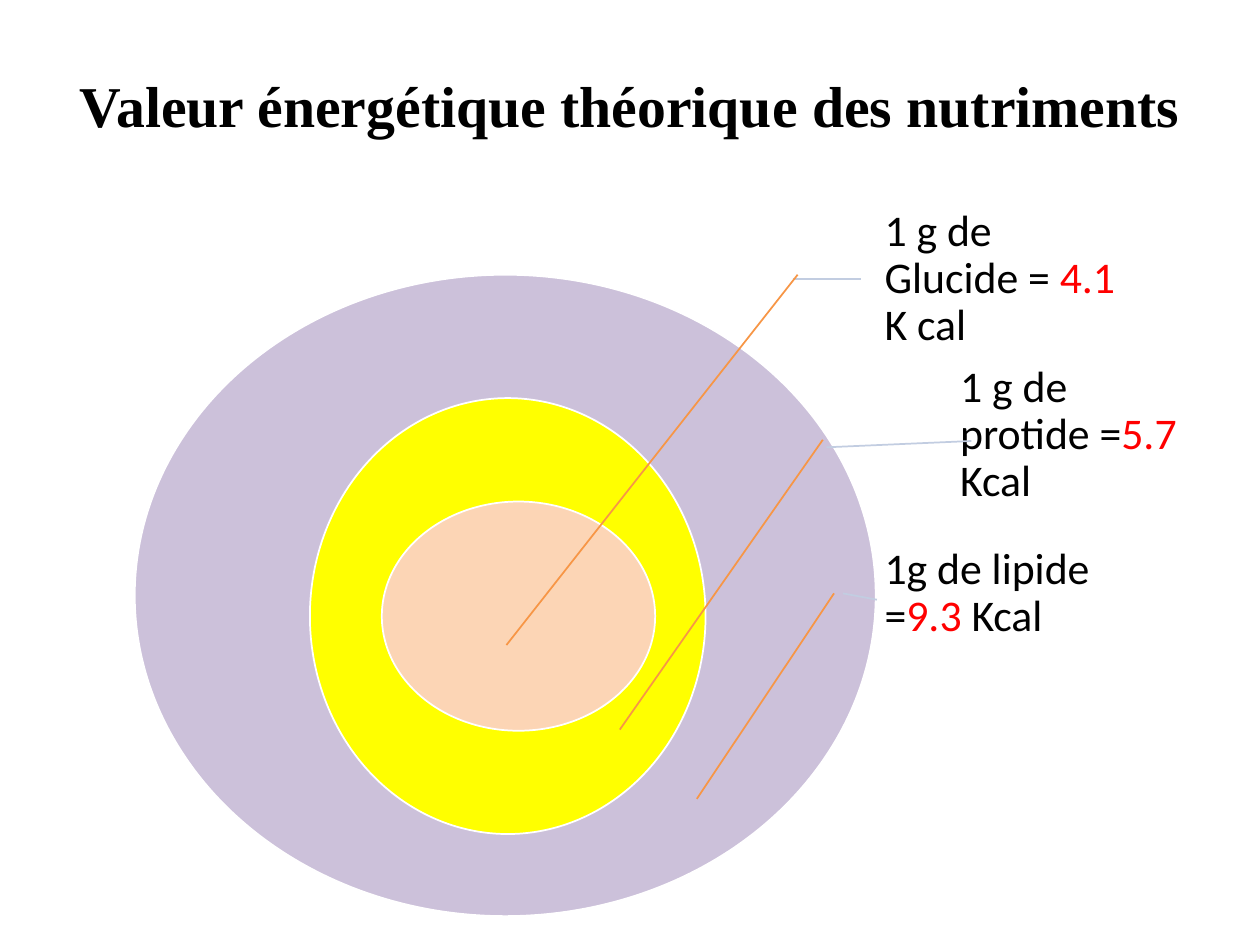
from dataclasses import dataclass

from pptx import Presentation
from pptx.dml.color import RGBColor as Rgb
from pptx.enum import shapes as sh, text as tx
from pptx.oxml import ns, xmlchemy as xc
from pptx.util import Pt


@dataclass(frozen=True)
class Theme:
    head: str = "Times New Roman"
    body: str = "Calibri"
    big: int = 33
    size: int = 25
    ink: Rgb = Rgb(0, 0, 0)
    mark: Rgb = Rgb(255, 0, 0)
    edge: Rgb = Rgb(255, 255, 255)
    fat: Rgb = Rgb(0xCC, 0xC1, 0xDA)
    protein: Rgb = Rgb(255, 255, 0)
    sugar: Rgb = Rgb(0xFC, 0xD5, 0xB5)
    link: Rgb = Rgb(0xC2, 0xCD, 0xE1)
    beam: Rgb = Rgb(0xF7, 0x96, 0x46)


T = Theme()

# Rings from the outside in: box and fill
RINGS = [
    ((77, 157, 423.4, 366.5), T.fat),
    ((177.1, 227.5, 226.1, 249.1), T.protein),
    ((218.2, 286.6, 156.2, 131), T.sugar),
]

# Labels: box, text before, value and after, link ends, beam ends, link joined to label
LABELS = [
    ((491.8, 114.5, 154.1, 90), ("1 g de Glucide = ", "4.1", " K cal"),
     (452.9, 159.5, 491.8, 159.5), (455.8, 157, 289.4, 368.6), True),
    ((535, 203.8, 149, 90), ("1 g de protide =", "5.7", " Kcal"),
     (472.3, 255.6, 555.1, 252), (470.2, 251.3, 354.2, 416.9), False),
    ((491.8, 294.5, 154.1, 90), ("1g de lipide =", "9.3 ", "Kcal"),
     (481.7, 339.1, 501.1, 342.7), (476.6, 339.1, 398.2, 456.5), False),
]


def pts(nums):
    return [Pt(n) for n in nums]


def set_font(para, name, size):
    para.line_spacing = 0.9
    para.font.name = name
    para.font.size = Pt(size)
    para.font.color.rgb = T.ink


def add_title(slide, words):
    title = slide.shapes.title
    title.left, title.top, title.width, title.height = pts((36, 0, 648, 123.8))
    frame = title.text_frame
    frame.text = words
    frame.auto_size = tx.MSO_AUTO_SIZE.NONE
    frame.vertical_anchor = tx.MSO_ANCHOR.MIDDLE
    para = frame.paragraphs[0]
    para.alignment = tx.PP_ALIGN.CENTER
    set_font(para, T.head, T.big)
    para.font.bold = True


def add_ring(slide, box, fill):
    ring = slide.shapes.add_shape(sh.MSO_SHAPE.OVAL, *pts(box))
    ring.shadow.inherit = False
    ring.fill.solid()
    ring.fill.fore_color.rgb = fill
    ring.line.color.rgb = T.edge
    ring.line.width = Pt(1)


def add_label(slide, box, parts):
    label = slide.shapes.add_textbox(*pts(box))
    frame = label.text_frame
    frame.word_wrap = True
    frame.vertical_anchor = tx.MSO_ANCHOR.MIDDLE
    frame.margin_left = Pt(13.7)
    frame.margin_top = frame.margin_right = frame.margin_bottom = Pt(2.2)
    para = frame.paragraphs[0]
    set_font(para, T.body, T.size)
    for part in parts:
        para.add_run().text = part
    para.runs[1].font.color.rgb = T.mark
    return label


def add_line(slide, ends, color):
    line = slide.shapes.add_connector(sh.MSO_CONNECTOR.STRAIGHT, *pts(ends))
    line.line.color.rgb = color
    line.line.width = Pt(1)
    props = line._element.spPr
    props.append(xc.OxmlElement("a:effectLst"))
    return line


def main():
    deck = Presentation()
    deck.slide_width, deck.slide_height = pts((720, 540))
    slide = deck.slides.add_slide(deck.slide_layouts[5])

    # Title
    add_title(slide, "Valeur énergétique théorique des nutriments")

    # Nested rings
    for box, fill in RINGS:
        add_ring(slide, box, fill)

    # Labels with their leader lines
    for box, parts, link, beam, joined in LABELS:
        label = add_label(slide, box, parts)
        line = add_line(slide, link, T.link)
        if joined:
            line.end_connect(label, 1)
        add_line(slide, beam, T.beam)

    deck.save("out.pptx")


if __name__ == "__main__":
    main()
